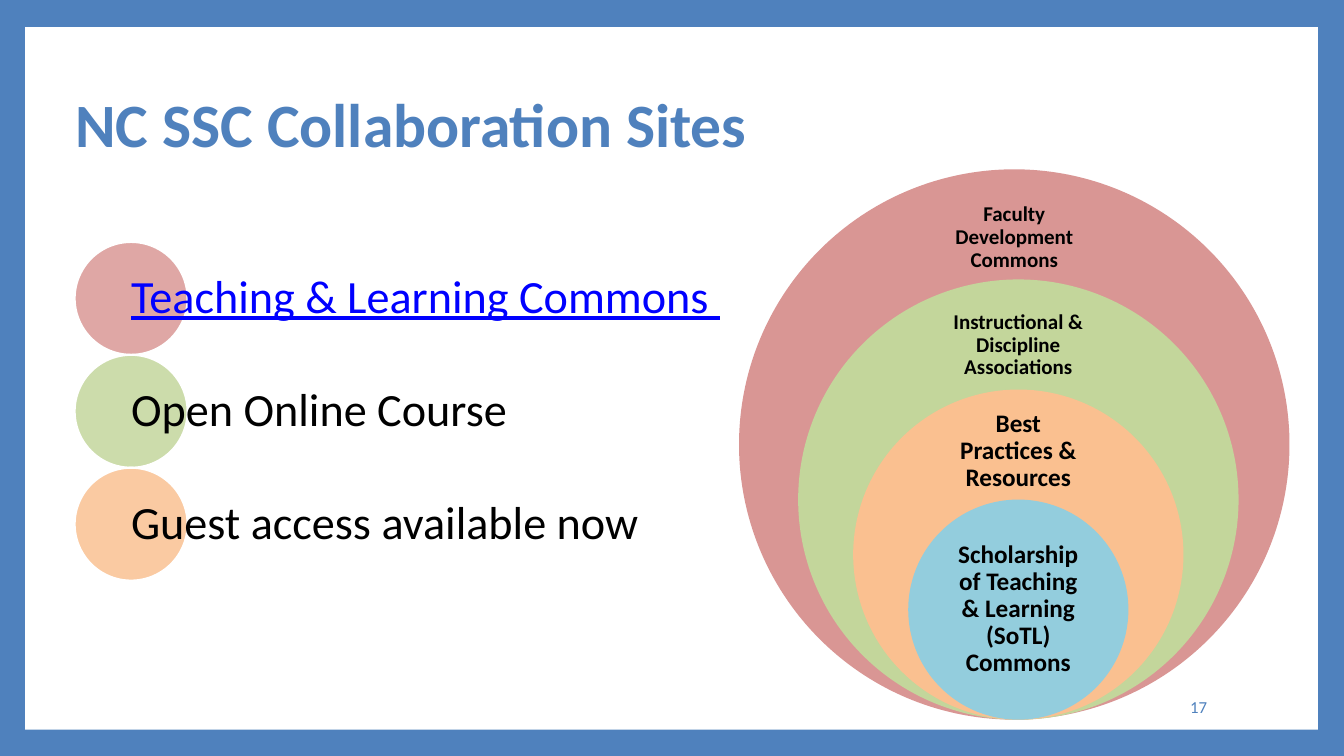
from dataclasses import dataclass

from lxml.etree import SubElement
from pptx import Presentation
from pptx.dml.color import RGBColor as RGB
from pptx.enum.shapes import MSO_SHAPE as SHAPE
from pptx.enum.text import MSO_ANCHOR as ANCHOR, PP_ALIGN as ALIGN
from pptx.oxml.ns import qn
from pptx.util import Inches, Pt


@dataclass(frozen=True)
class Theme:
    font: str = "Calibri"
    blue: str = "4F81BD"
    white: str = "FFFFFF"
    black: str = "000000"
    link: str = "0000FF"
    rings: tuple = ("D99694", "C3D69B", "FAC090", "93CDDD")
    dots: tuple = ("C0504D", "9BBB59", "F79646")
    title: int = 44
    item: int = 33
    ring_large: int = 18
    ring_small: int = 15
    number: int = 12


class SlideBuilder:
    def __init__(self, slide, theme):
        self.s = slide
        self.theme = theme

    def background(self, color):
        fill = self.s.background.fill
        fill.solid()
        fill.fore_color.rgb = RGB.from_string(color)

    def shape(self, kind, box, color, alpha=None, outline=None):
        sp = self.s.shapes.add_shape(kind, *map(Inches, box))
        sp.shadow.inherit = False
        sp.fill.solid()
        sp.fill.fore_color.rgb = RGB.from_string(color)
        if alpha is not None:
            clr = sp.fill._xPr.find(qn("a:solidFill"))[0]
            SubElement(clr, qn("a:alpha")).set("val", str(alpha * 1000))
        if outline:
            sp.line.color.rgb = RGB.from_string(outline)
            sp.line.width = Pt(1.5)
        else:
            sp.line.fill.background()

    def text(self, box, words, size, color, align=ALIGN.LEFT, bold=False,
             underline=False, inset=(0.1, 0.05), spacing=0.9):
        tf = self.s.shapes.add_textbox(*map(Inches, box)).text_frame
        tf.word_wrap = True
        tf.vertical_anchor = ANCHOR.MIDDLE
        tf.margin_left = tf.margin_right = Inches(inset[0])
        tf.margin_top = tf.margin_bottom = Inches(inset[1])
        p = tf.paragraphs[0]
        p.text = words
        p.alignment = align
        p.line_spacing = spacing
        font = p.runs[0].font
        font.name = self.theme.font
        font.size = Pt(size)
        font.bold = bold
        font.underline = underline
        font.color.rgb = RGB.from_string(color)


def main():
    prs = Presentation()
    prs.slide_width, prs.slide_height = Inches(13.33), Inches(7.5)
    t = Theme()
    b = SlideBuilder(prs.slides.add_slide(prs.slide_layouts[6]), t)

    # Frame, title and slide number
    b.background(t.blue)
    b.shape(SHAPE.RECTANGLE, (0.25, 0.27, 12.82, 6.97), t.white)
    b.text((0.65, 0.53, 10.8, 1.48), "NC SSC Collaboration Sites",
           t.title, t.blue, bold=True)
    b.text((10.2, 6.81, 1.87, 0.4), "17", t.number, t.blue,
           align=ALIGN.RIGHT, spacing=1.0)

    # Nested circles resting on one bottom point, each a fifth smaller
    outer, bottom, label_width = 5.46, 7.14, 1.53
    rings = [
        # label, centre x, label top, label height, size, inset
        ("Faculty Development Commons", 10.06, 1.95, 0.82, t.ring_small, 0.12),
        ("Instructional & Discipline Associations", 10.1, 3.03, 0.79,
         t.ring_small, 0.12),
        ("Best Practices & Resources", 10.1, 4.11, 0.74, t.ring_large, 0.14),
        ("Scholarship of Teaching & Learning (SoTL) Commons", 10.1, 5.5, 1.09,
         t.ring_large, 0.14),
    ]
    for i, (label, center, top, height, size, inset) in enumerate(rings):
        d = outer * (1 - 0.2 * i)
        b.shape(SHAPE.OVAL, (center - d / 2, bottom - d, d, d), t.rings[i])
        b.text((center - label_width / 2, top, label_width, height), label,
               size, t.black, align=ALIGN.CENTER, bold=True,
               inset=(inset, inset))

    # List items, each starting at the centre of its dot
    dot, left, first_top = 1.12, 0.74, 2.4
    items = [
        ("Teaching & Learning Commons ", t.link, True),
        ("Open Online Course", t.black, False),
        ("Guest access available now", t.black, False),
    ]
    for i, (words, color, underline) in enumerate(items):
        top = first_top + i * dot
        b.shape(SHAPE.OVAL, (left, top, dot, dot), t.dots[i], alpha=50,
                outline=t.white)
        b.text((left + dot / 2, top, 5.98, dot), words, t.item, color,
               underline=underline, inset=(0, 0.05))

    prs.save("out.pptx")


if __name__ == "__main__":
    main()
